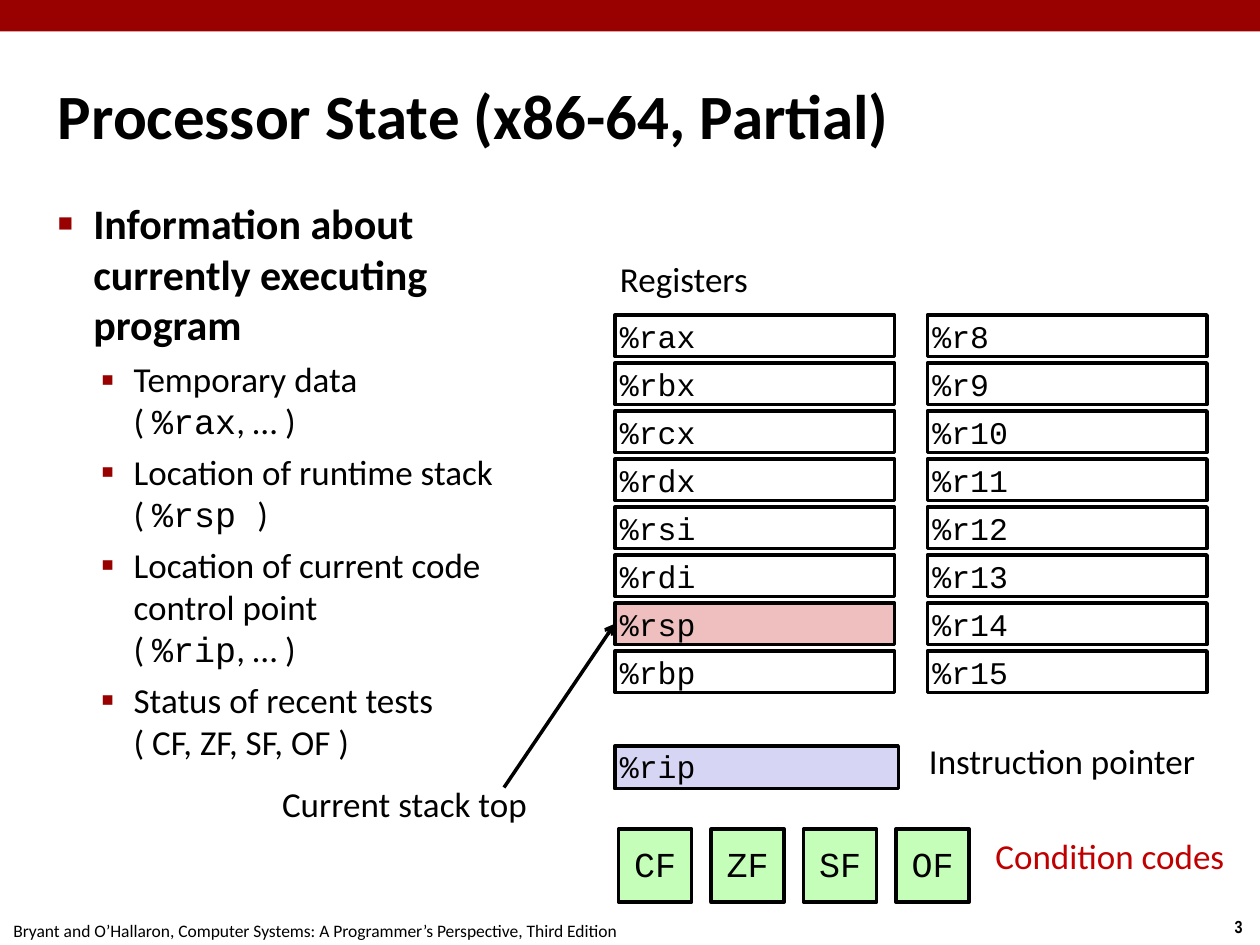
from copy import deepcopy
from dataclasses import dataclass

from lxml import etree
from pptx import Presentation
from pptx.dml.color import RGBColor
from pptx.enum.shapes import MSO_CONNECTOR, MSO_SHAPE
from pptx.enum.text import MSO_ANCHOR, MSO_AUTO_SIZE, PP_ALIGN
from pptx.oxml.ns import qn
from pptx.util import Inches, Pt

RECTANGLE = MSO_SHAPE.RECTANGLE
STRAIGHT = MSO_CONNECTOR.STRAIGHT
LEFT, CENTER = PP_ALIGN.LEFT, PP_ALIGN.CENTER
TOP, MIDDLE = MSO_ANCHOR.TOP, MSO_ANCHOR.MIDDLE
FIXED = MSO_AUTO_SIZE.NONE

COLUMNS, ROWS = 100, 75


@dataclass(frozen=True)
class Theme:
    ink: str = "000000"
    crimson: str = "990000"
    alert: str = "C00000"
    stack: str = "EFBFBF"
    pointer: str = "D6D6F4"
    flag: str = "C5FEB8"
    sans: str = "Calibri"
    narrow: str = "Arial Narrow"
    mono: str = "Courier New"
    title: int = 36
    lead: int = 24
    label: int = 20
    register: int = 18
    footer: int = 10
    stroke: int = 2
    inset: float = 0.04


class SlideBuilder:
    def __init__(self, deck, theme):
        self.theme = theme
        self.column = deck.slide_width / COLUMNS
        self.row = deck.slide_height / ROWS
        self.page = deck.slides.add_slide(deck.slide_layouts[1])

    def area(self, left, top, width, height):
        return (round(left * self.column), round(top * self.row),
                round(width * self.column), round(height * self.row))

    def style_span(self, span, size, font=None, color=None, bold=False):
        span.font.size = Pt(size)
        span.font.name = font or self.theme.sans
        span.font.bold = bold
        span.font.color.rgb = RGBColor.from_string(color or self.theme.ink)

    def style_frame(self, frame, anchor=TOP, wrap=True):
        inset = Inches(self.theme.inset)
        frame.margin_left = frame.margin_right = inset
        frame.margin_top = frame.margin_bottom = inset
        frame.auto_size = FIXED
        frame.vertical_anchor = anchor
        frame.word_wrap = wrap

    def fill_text(self, frame, text, size, align=LEFT, **style):
        frame.text = text
        para = frame.paragraphs[0]
        para.alignment = align
        self.style_span(para.runs[0], size, **style)
        return para

    def place(self, holder, area):
        holder.left, holder.top, holder.width, holder.height = self.area(*area)
        return holder.text_frame

    def title(self, text, area):
        frame = self.place(self.page.shapes.title, area)
        self.style_frame(frame, MIDDLE)
        self.fill_text(frame, text, self.theme.title, bold=True)

    def bullet(self, para, char, percent, margin, hanging):
        props = para._p.get_or_add_pPr()
        props.set("marL", str(Inches(margin)))
        props.set("indent", str(-Inches(hanging)))
        color = etree.SubElement(props, qn("a:buClr"))
        etree.SubElement(color, qn("a:srgbClr"), val=self.theme.crimson)
        etree.SubElement(props, qn("a:buSzPct"), val=str(percent * 1000))
        etree.SubElement(props, qn("a:buChar"), char=char)

    def outline(self, lead, points, area):
        frame = self.place(self.page.placeholders[1], area)
        self.style_frame(frame)
        para = self.fill_text(frame, lead, self.theme.lead, bold=True)
        para.space_before = Pt(6)
        self.bullet(para, "■", 60, 0.28, 0.28)
        for text, code, ending in points:
            para = frame.add_paragraph()
            para.text = text
            para.level = 1
            para.space_before = Pt(5)
            self.bullet(para, "▪", 110, 0.6, 0.26)
            for span in para.runs:
                self.style_span(span, self.theme.label)
            for line_break in para._p.findall(qn("a:br")):
                line_break.append(deepcopy(para.runs[0]._r.rPr))
            for part, font in ((code, self.theme.mono), (ending, self.theme.sans)):
                if part:
                    span = para.add_run()
                    span.text = part
                    self.style_span(span, self.theme.label, font)

    def label(self, text, area, size=None, wrap=False, **style):
        frame = self.page.shapes.add_textbox(*self.area(*area)).text_frame
        self.style_frame(frame, wrap=wrap)
        self.fill_text(frame, text, size or self.theme.label, **style)

    def block(self, area, fill=None, outlined=True):
        shape = self.page.shapes.add_shape(RECTANGLE, *self.area(*area))
        shape.shadow.inherit = False
        if fill:
            shape.fill.solid()
            shape.fill.fore_color.rgb = RGBColor.from_string(fill)
        else:
            shape.fill.background()
        if outlined:
            shape.line.color.rgb = RGBColor.from_string(self.theme.ink)
            shape.line.width = Pt(self.theme.stroke)
        else:
            shape.line.fill.background()
        return shape

    def cell(self, text, area, fill=None, size=None, align=LEFT, spacing=None):
        frame = self.block(area, fill).text_frame
        self.style_frame(frame, MIDDLE)
        para = self.fill_text(frame, text, size or self.theme.register, align,
                              font=self.theme.mono)
        para.line_spacing = spacing

    def arrow(self, start, end):
        points = self.area(*start, *end)
        connector = self.page.shapes.add_connector(STRAIGHT, *points)
        connector.line.color.rgb = RGBColor.from_string(self.theme.ink)
        connector.line.width = Pt(self.theme.stroke)
        props = connector._element.spPr
        etree.SubElement(props.find(qn("a:ln")), qn("a:tailEnd"), type="arrow")
        etree.SubElement(props, qn("a:effectLst"))


def main():
    deck = Presentation()
    deck.slide_width, deck.slide_height = Inches(10), Inches(7.5)
    theme = Theme()
    slide = SlideBuilder(deck, theme)

    slide.block((0, 0, COLUMNS, 2.5), theme.crimson, outlined=False)
    slide.title("Processor State (x86-64, Partial)", (4.2, 2.8, 91.7, 12.5))
    slide.outline("Information about currently executing program", [
        ("Temporary data\v( ", "%rax", ", … )"),
        ("Location of runtime stack\v( ", "%rsp ", ")"),
        ("Location of current code control point\v( ", "%rip", ", … )"),
        ("Status of recent tests\v( CF, ZF, SF, OF )", "", ""),
    ], (4.2, 15.3, 36.5, 59.4))

    slide.label("Registers", (48.8, 20, 11.2, 4.2))
    banks = (
        (48.8, ("rax", "rbx", "rcx", "rdx", "rsi", "rdi", "rsp", "rbp")),
        (73.6, [f"r{number}" for number in range(8, 16)]),
    )
    for left, names in banks:
        for index, name in enumerate(names):
            fill = theme.stack if name == "rsp" else None
            slide.cell(f"%{name}", (left, 25 + 3.81 * index, 22.2, 3.3), fill)

    slide.cell("%rip", (48.8, 59.2, 22.5, 3.4), theme.pointer, spacing=0.95)
    slide.label("Instruction pointer", (73, 58.3, 22.6, 4.2), align=CENTER)

    for index, flag in enumerate(("CF", "ZF", "SF", "OF")):
        slide.cell(flag, (49.1 + 7.34 * index, 65.8, 5.8, 5.8), theme.flag,
                   theme.label, CENTER, 0.95)
    slide.label("Condition codes", (78.6, 65.8, 19.7, 4.9), wrap=True,
                color=theme.alert)

    slide.label("Current stack top", (21.7, 61.7, 20.8, 4.2), align=CENTER)
    slide.arrow((40, 62.5), (48.8, 49.5))

    slide.label("Bryant and O’Hallaron, Computer Systems: "
                "A Programmer’s Perspective, Third Edition",
                (0, 72.6, 50, 2.4), theme.footer, align=CENTER)
    slide.label("3", (96.6, 72.3, 3.4, 2.7), theme.footer, align=CENTER,
                font=theme.narrow, bold=True)

    deck.save("out.pptx")


if __name__ == "__main__":
    main()
